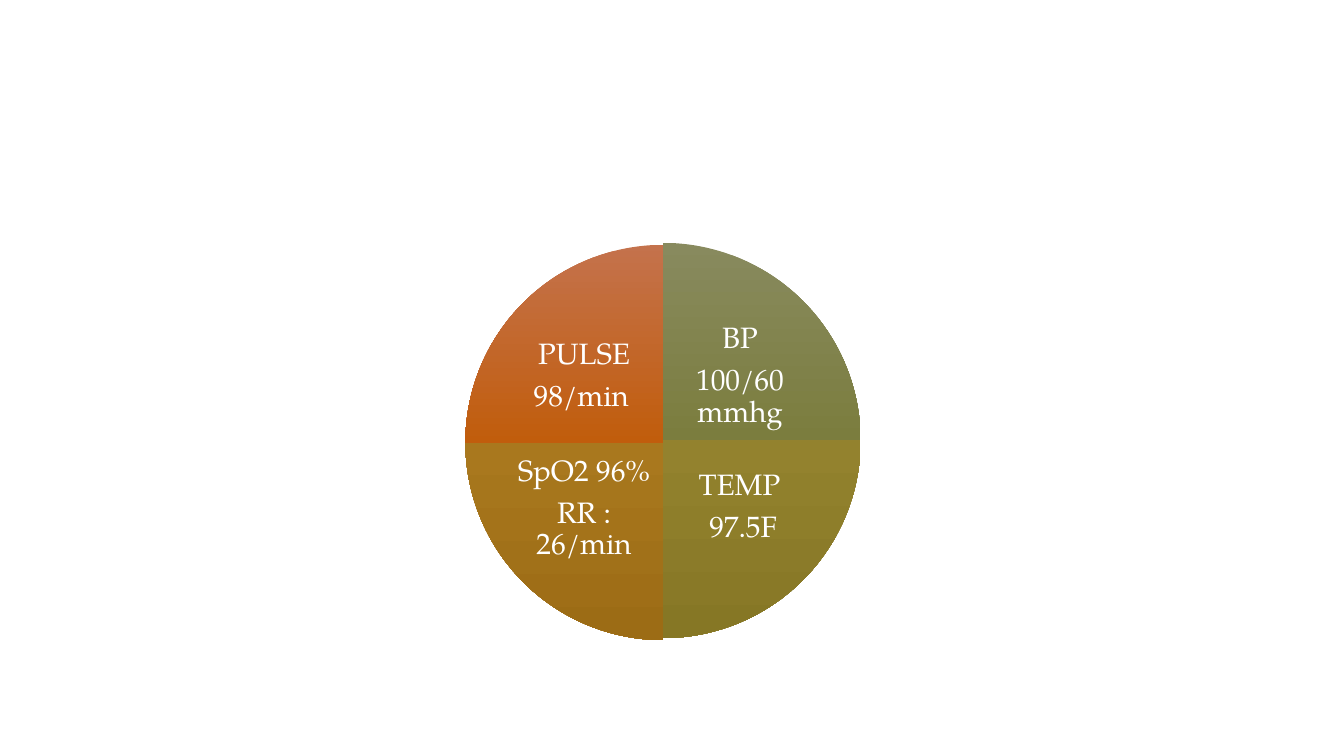
from copy import deepcopy
from dataclasses import dataclass

from lxml import etree
from pptx import Presentation
from pptx.dml.color import RGBColor
from pptx.enum.shapes import MSO_SHAPE
from pptx.enum.text import MSO_ANCHOR, PP_ALIGN
from pptx.oxml.ns import qn
from pptx.util import Cm, Pt

PIE = MSO_SHAPE.PIE
MIDDLE = MSO_ANCHOR.MIDDLE
CENTER = PP_ALIGN.CENTER


@dataclass(frozen=True)
class Theme:
    font: str = "TeX Gyre Pagella"
    size: float = 21
    text: str = "FFFFFF"
    green: tuple = ("888A5E", "7B7D3E", "6F7135")
    olive: tuple = ("9C8F56", "93822E", "867725")
    ochre: tuple = ("AF8650", "A9781E", "9C6C15")
    orange: tuple = ("C4724C", "C15D0C", "B35203")


theme = Theme()


def fill_gradient(shape, colors):
    """Fill a shape from top to bottom with three evenly spaced colours."""
    shape.fill.gradient()
    shape.fill.gradient_angle = 270
    stop_list = shape._element.spPr.find(".//" + qn("a:gsLst"))
    stop_list.append(deepcopy(stop_list[-1]))
    for index, (stop, color) in enumerate(zip(shape.fill.gradient_stops, colors)):
        stop.position = index / 2
        stop.color.rgb = RGBColor.from_string(color)


def add_label(shapes, left, top, lines):
    """Add the centred text of one quarter."""
    box = shapes.add_textbox(Cm(left), Cm(top), Cm(3.68), Cm(2.97))
    frame = box.text_frame
    frame.word_wrap = True
    frame.vertical_anchor = MIDDLE
    frame.margin_left = frame.margin_right = Cm(0.08)
    frame.margin_top = frame.margin_bottom = Cm(0.08)
    for index, line in enumerate(lines):
        paragraph = frame.paragraphs[0] if index == 0 else frame.add_paragraph()
        paragraph.alignment = CENTER
        paragraph.line_spacing = 0.9
        # Space after as a share of the line height
        space_after = etree.SubElement(paragraph._p.get_or_add_pPr(), qn("a:spcAft"))
        etree.SubElement(space_after, qn("a:spcPct"), val="35000")
        run = paragraph.add_run()
        run.text = line
        run.font.name = theme.font
        run.font.size = Pt(theme.size)
        run.font.color.rgb = RGBColor.from_string(theme.text)


presentation = Presentation()
presentation.slide_width = Cm(33.87)
presentation.slide_height = Cm(19.05)
slide = presentation.slides.add_slide(presentation.slide_layouts[6])

# Quarters clockwise from top right: colours, pie top, label left and top, lines
quarters = [
    (theme.green, 6.12, 16.81, 7.98, ("BP", "100/60 mmhg")),
    (theme.olive, 6.12, 16.89, 11.28, ("TEMP ", "97.5F")),
    (theme.ochre, 6.17, 12.88, 11.33, ("SpO2 96%", "RR : 26/min")),
    (theme.orange, 6.17, 12.88, 8.0, ("PULSE", "98/min\t")),
]
DIAMETER = 9.96
QUARTER_TURN = 54  # 90 degrees in adjustment units

# Vital signs wheel
wheel = slide.shapes.add_group_shape()
for index, (colors, pie_top, label_left, label_top, lines) in enumerate(quarters):
    pie = wheel.shapes.add_shape(PIE, Cm(11.73), Cm(pie_top), Cm(DIAMETER), Cm(DIAMETER))
    pie.adjustments[0] = QUARTER_TURN * ((index + 3) % 4)
    pie.adjustments[1] = QUARTER_TURN * index
    pie.shadow.inherit = False
    pie.line.fill.background()
    fill_gradient(pie, colors)
    add_label(wheel.shapes, label_left, label_top, lines)

presentation.save("out.pptx")
